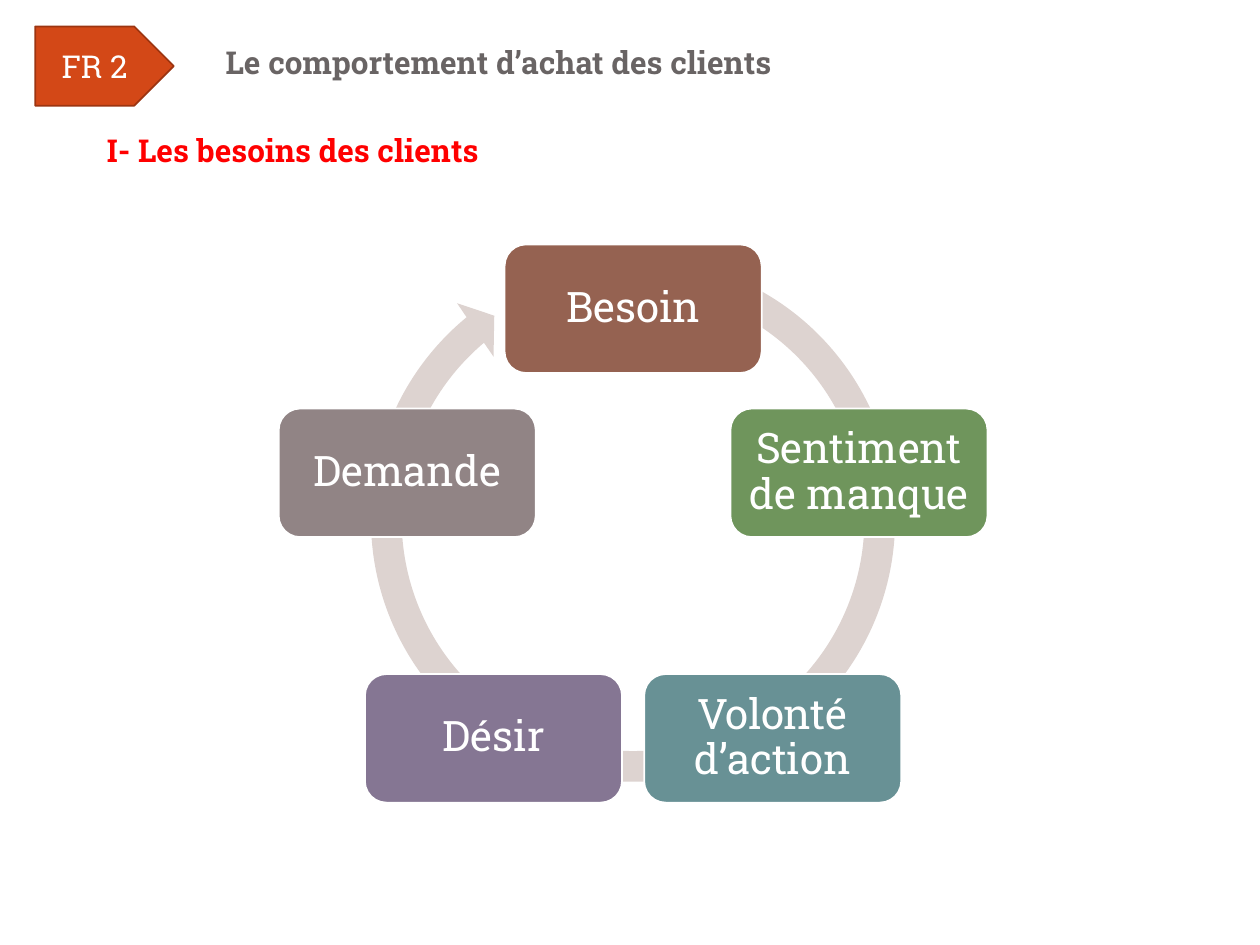
import math

from pptx import Presentation
from pptx.dml.color import RGBColor
from pptx.enum import shapes, text
from pptx.util import Inches, Pt

FONT = "Roboto Slab"
WHITE = RGBColor(0xFF, 0xFF, 0xFF)
RED = RGBColor(0xFF, 0x00, 0x00)
GREY = RGBColor(0x69, 0x64, 0x64)
ORANGE = RGBColor(0xD3, 0x48, 0x17)
DARK_ORANGE = RGBColor(0x9C, 0x35, 0x11)
RING = RGBColor(0xDD, 0xD3, 0xD0)

STEPS = [
    ("Besoin", RGBColor(0x95, 0x62, 0x51)),
    ("Sentiment de manque", RGBColor(0x6F, 0x95, 0x5C)),
    ("Volonté d’action", RGBColor(0x68, 0x91, 0x95)),
    ("Désir", RGBColor(0x85, 0x76, 0x93)),
    ("Demande", RGBColor(0x91, 0x84, 0x85)),
]


def write(shape, words, size, color, bold=False,
          align=text.PP_ALIGN.LEFT, anchor=text.MSO_ANCHOR.TOP):
    frame = shape.text_frame
    frame.word_wrap = True
    frame.auto_size = text.MSO_AUTO_SIZE.NONE
    frame.vertical_anchor = anchor
    para = frame.paragraphs[0]
    para.alignment = align
    span = para.add_run()
    span.text = words
    span.font.name = FONT
    span.font.size = Pt(size)
    span.font.bold = bold
    span.font.color.rgb = color
    return para


def add_filled(page, kind, left, top, width, height, fill, line=None):
    shape = page.shapes.add_shape(
        kind, Inches(left), Inches(top), Inches(width), Inches(height))
    shape.shadow.inherit = False
    shape.fill.solid()
    shape.fill.fore_color.rgb = fill
    if line is None:
        shape.line.fill.background()
    else:
        shape.line.color.rgb = line
        shape.line.width = Pt(1)
    return shape


def add_header(page, left, top):
    """Place the numbered tag, the slide title and the section heading."""
    tag = add_filled(page, shapes.MSO_SHAPE.PENTAGON, left, top, 1.1, 0.63,
                     ORANGE, DARK_ORANGE)
    write(tag, "FR 2", 18, WHITE, align=text.PP_ALIGN.CENTER,
          anchor=text.MSO_ANCHOR.MIDDLE)

    title = page.shapes.title
    title.left, title.top = Inches(left + 1.41), Inches(top + 0.08)
    title.width, title.height = Inches(7.95), Inches(0.4)
    write(title, "Le comportement d’achat des clients", 18, GREY, bold=True)

    heading = page.shapes.add_textbox(
        Inches(left + 0.47), Inches(top + 0.78), Inches(5.43), Inches(0.4))
    write(heading, "I- Les besoins des clients", 18, RED, bold=True)


def add_cycle(page, left, top, size):
    """Place a ring arrow in a square box, with the steps spaced evenly on it."""
    ring = add_filled(page, shapes.MSO_SHAPE.CIRCULAR_ARROW,
                      left, top, size, size, RING)
    for index, value in enumerate((0.055, 3.307, 138.152, 173.621, 0.058)):
        ring.adjustments[index] = value

    width, height, radius = 2.04, 1.02, 1.885
    center_x = left + size / 2
    center_y = top + 0.54 + radius
    for index, (label, color) in enumerate(STEPS):
        angle = 2 * math.pi * index / len(STEPS)
        x = center_x + radius * math.sin(angle)
        y = center_y - radius * math.cos(angle)
        step = add_filled(page, shapes.MSO_SHAPE.ROUNDED_RECTANGLE,
                          x - width / 2, y - height / 2, width, height,
                          color, WHITE)
        frame = step.text_frame
        frame.margin_left = frame.margin_right = Inches(0.1)
        frame.margin_top = frame.margin_bottom = Inches(0.1)
        para = write(step, label, 24, WHITE, align=text.PP_ALIGN.CENTER,
                     anchor=text.MSO_ANCHOR.MIDDLE)
        para.line_spacing = 0.9


def main():
    deck = Presentation()
    deck.slide_width, deck.slide_height = Inches(10), Inches(7.5)
    page = deck.slides.add_slide(deck.slide_layouts.get_by_name("Title Only"))
    add_header(page, 0.28, 0.21)
    add_cycle(page, 2.81, 1.91, 4.43)
    deck.save("out.pptx")


if __name__ == "__main__":
    main()
